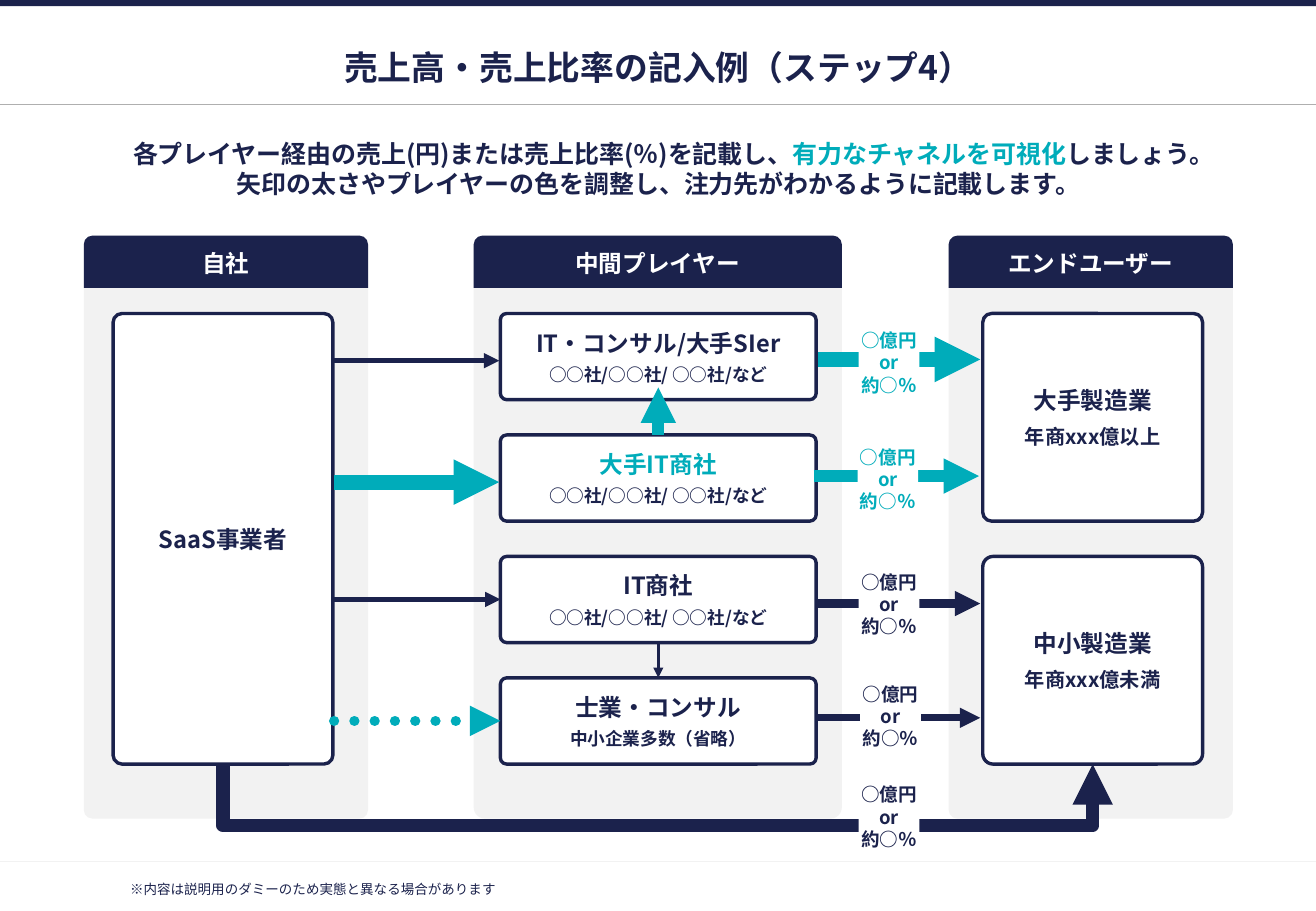
from pptx import Presentation
from pptx.dml.color import RGBColor
from pptx.enum.dml import MSO_LINE
from pptx.enum.shapes import MSO_CONNECTOR, MSO_SHAPE
from pptx.enum.text import MSO_ANCHOR, MSO_AUTO_SIZE, PP_ALIGN
from pptx.oxml.ns import qn
from pptx.util import Pt
from lxml import etree

RECT, ROUND = MSO_SHAPE.RECTANGLE, MSO_SHAPE.ROUNDED_RECTANGLE
TAB = MSO_SHAPE.ROUND_2_SAME_RECTANGLE
STRAIGHT, ELBOW = MSO_CONNECTOR.STRAIGHT, MSO_CONNECTOR.ELBOW
CENTER, LEFT = PP_ALIGN.CENTER, PP_ALIGN.LEFT
MIDDLE, TOP = MSO_ANCHOR.MIDDLE, MSO_ANCHOR.TOP
DOTS = MSO_LINE.ROUND_DOT
FONT = "Noto Sans CJK JP"
NAVY = RGBColor(0x1B, 0x22, 0x4C)
TEAL = RGBColor(0x00, 0xAC, 0xBA)
WHITE = RGBColor(0xFF, 0xFF, 0xFF)
PALE = RGBColor(0xF2, 0xF2, 0xF2)
GRAY = RGBColor(0xAF, 0xAF, 0xAF)

# Content
TITLE = "売上高・売上比率の記入例（ステップ4）"
LEAD = [
    [("各プレイヤー経由の売上(円)または売上比率(％)を記載し、", NAVY),
     ("有力なチャネルを可視化", TEAL), ("しましょう。", NAVY)],
    [("矢印の太さやプレイヤーの色を調整し、注力先がわかるように記載します。", NAVY)],
]
NOTE = "※内容は説明用のダミーのため実態と異なる場合があります"
COLUMNS = [("自社", 49.7, 168.5), ("中間プレイヤー", 280.8, 218.2),
           ("エンドユーザー", 562.3, 168.5)]
COMPANIES = "○○社/○○社/ ○○社/など"
PLAYERS = [("IT・コンサル/大手SIer", NAVY, COMPANIES), ("大手IT商社", TEAL, COMPANIES),
           ("IT商社", NAVY, COMPANIES), ("士業・コンサル", NAVY, "中小企業多数（省略）")]
USERS = [("大手製造業", "年商xxx億以上", 0.043), ("中小製造業", "年商xxx億未満", 0.05)]
AMOUNT = ["○億円", "or", "約○％"]
# Arrows to players: y (None joins the middle of the box), colour, width, dash
SUPPLY = [(213.8, NAVY, 3, None), (285.8, TEAL, 9, None),
          (None, NAVY, 3, None), (None, TEAL, 6, DOTS)]
# Arrows to users: start x, y, end x, colour, width
SALES = [(485, 213.1, 581, TEAL, 9), (482.4, 282.2, 580.3, TEAL, 7),
         (484, 357.8, 581, NAVY, 5), (484, 425.5, 581, NAVY, 4)]
LABELS = [(509, 194.4, TEAL), (508.3, 263.5, TEAL), (509, 337.7, NAVY),
          (509.8, 403.9, NAVY), (509, 463.7, NAVY)]

# Layout
W, H = 780, 540
COL_TOP, COL_H, TAB_H = 139.7, 345.6, 31
ROW_TOP, ROW_H, PITCH = 185.8, 51.1, 72
SELF_X, PLAYER_X, USER_X = 67, 296.6, 582.5
SIDE_W, PLAYER_W = 130.3, 187.2
STACK_H = 3 * PITCH + ROW_H
INSET = 2.9

prs = Presentation()
prs.slide_width, prs.slide_height = Pt(W), Pt(H)
s = prs.slides.add_slide(prs.slide_layouts[1])


def write(sp, paras, align=CENTER, anchor=MIDDLE, after=0, inset=None, wrap=True, bold=True):
    """paras holds (runs, size) pairs; runs holds (text, colour) pairs."""
    tf = sp.text_frame
    fmt = {"word_wrap": wrap, "vertical_anchor": anchor, "auto_size": MSO_AUTO_SIZE.NONE}
    if inset is not None:
        fmt.update({f"margin_{side}": Pt(inset) for side in ("left", "right", "top", "bottom")})
    for key, value in fmt.items():
        setattr(tf, key, value)
    for i, (runs, size) in enumerate(paras):
        p = tf.add_paragraph() if i else tf.paragraphs[0]
        p.alignment, p.space_before, p.space_after = align, Pt(0), Pt(after)
        for text, colour in runs:
            r = p.add_run()
            r.text = text
            for key, value in {"name": FONT, "size": Pt(size), "bold": bold}.items():
                setattr(r.font, key, value)
            r.font.color.rgb = colour
            etree.SubElement(r.font._element, qn("a:ea")).set("typeface", FONT)


def place(sp, x, y, w, h):
    for key, value in {"left": x, "top": y, "width": w, "height": h}.items():
        setattr(sp, key, Pt(value))


def box(kind, x, y, w, h, fill, adj=None, outline=None):
    sp = s.shapes.add_shape(kind, Pt(x), Pt(y), Pt(w), Pt(h))
    sp.shadow.inherit = False
    sp.fill.solid()
    sp.fill.fore_color.rgb = fill
    if adj is not None:
        sp.adjustments[0] = adj
    if outline is None:
        sp.line.fill.background()
    else:
        sp.line.color.rgb, sp.line.width = outline, Pt(2)
    return sp


def line(x1, y1, x2, y2, colour, width, arrow=True, dash=None, kind=STRAIGHT):
    c = s.shapes.add_connector(kind, Pt(x1), Pt(y1), Pt(x2), Pt(y2))
    c.line.color.rgb, c.line.width = colour, Pt(width)
    spPr = c._element.spPr
    ln = spPr.find(qn("a:ln"))
    if dash:
        c.line.dash_style = dash
        ln.set("cap", "rnd")
    etree.SubElement(ln, qn("a:round"))
    if arrow:
        etree.SubElement(ln, qn("a:tailEnd")).set("type", "triangle")
    etree.SubElement(spPr, qn("a:effectLst"))
    return c


# Frame, title and lead
box(RECT, 0, 0, W, 3.6, NAVY)
for y, colour in ((61.9, GRAY), (510.5, PALE)):
    line(0, y, W, y, colour, 0.75, arrow=False)
title, body = s.shapes.title, s.placeholders[1]
place(title, 49.7, 24.5, 681.1, 30.2)
write(title, [([(TITLE, NAVY)], 20)], inset=INSET)
place(body, 49.7, 79.2, 681.1, 46.8)
for i, (margin, indent) in enumerate(((36, -18), (0, 0))):
    p = body.text_frame.add_paragraph() if i else body.text_frame.paragraphs[0]
    pPr = p._p.get_or_add_pPr()
    pPr.set("marL", str(Pt(margin)))
    pPr.set("indent", str(Pt(indent)))
    etree.SubElement(pPr, qn("a:buNone"))
lead_formats = [p._p.pPr for p in body.text_frame.paragraphs]
body.text_frame._txBody.remove(body.text_frame.paragraphs[1]._p)
write(body, [(runs, 14.8) for runs in LEAD], anchor=TOP, inset=INSET)
second = body.text_frame.paragraphs[1]._p.get_or_add_pPr()
for key in ("marL", "indent"):
    second.set(key, lead_formats[1].get(key))
etree.SubElement(second, qn("a:buNone"))

# Columns with headings
for name, x, w in COLUMNS:
    box(ROUND, x, COL_TOP, w, COL_H, PALE, 0.031)
    write(box(TAB, x, COL_TOP, w, TAB_H, NAVY), [([(name, WHITE)], 14)])

# Own company, players and end users
own = box(ROUND, SELF_X, ROW_TOP, SIDE_W, STACK_H, WHITE, 0.041, NAVY)
write(own, [([("SaaS事業者", NAVY)], 14)], after=6)
players = []
for i, (name, colour, detail) in enumerate(PLAYERS):
    sp = box(ROUND, PLAYER_X, ROW_TOP + i * PITCH, PLAYER_W, ROW_H, WHITE, 0.074, NAVY)
    write(sp, [([(name, colour)], 14), ([(detail, NAVY)], 10.5)], after=4, inset=INSET)
    players.append(sp)
for i, (name, detail, adj) in enumerate(USERS):
    sp = box(ROUND, USER_X, ROW_TOP + 2 * i * PITCH, SIDE_W, PITCH + ROW_H, WHITE, adj, NAVY)
    write(sp, [([(name, NAVY)], 14), ([(detail, NAVY)], 12)], after=6)

# Arrows from own company to players
for i, (y, colour, width, dash) in enumerate(SUPPLY):
    mid = ROW_TOP + i * PITCH + ROW_H / 2
    c = line(198, y or mid, PLAYER_X - 0.7, y or mid, colour, width, dash=dash)
    if y is None:
        c.end_connect(players[i], 1)

# Arrows between players
center = PLAYER_X + PLAYER_W / 2
c = line(center, ROW_TOP + 2 * PITCH + ROW_H, center, ROW_TOP + 3 * PITCH, NAVY, 2)
c.begin_connect(players[2], 2)
c.end_connect(players[3], 0)
c = line(center, ROW_TOP + PITCH, center, 229.7, TEAL, 7)
c.begin_connect(players[1], 0)

# Arrows from players to end users
for x1, y, x2, colour, width in SALES:
    line(x1, y, x2, y, colour, width)

# Direct route: a quarter-turned elbow running below the columns
x1, x2 = SELF_X + SIDE_W / 2, USER_X + SIDE_W / 2
bottom, span, step, drop = ROW_TOP + STACK_H, x2 - x1, 0.28, 36.1
direct = line(x1, bottom, x2, bottom, NAVY, 8, kind=ELBOW)
place(direct, (x1 + x2 - step) / 2, bottom - span / 2, step, span)
xfrm = direct._element.spPr.find(qn("a:xfrm"))
xfrm.set("rot", "16200000")
xfrm.set("flipH", "1")
guide = etree.SubElement(direct._element.spPr.find(qn("a:prstGeom")).find(qn("a:avLst")), qn("a:gd"))
guide.set("name", "adj1")
guide.set("fmla", f"val {round(drop / step * 100000)}")

# Sales labels and footnote
for x, y, colour in LABELS:
    write(box(RECT, x, y, 36, 41, WHITE), [([(t, colour)], 11) for t in AMOUNT],
          inset=INSET, wrap=False)
note = s.shapes.add_textbox(Pt(74.2), Pt(519.1), Pt(566.6), Pt(15.1))
write(note, [([(NOTE, NAVY)], 8)], align=LEFT, anchor=TOP, inset=INSET, bold=False)

prs.save("out.pptx")
